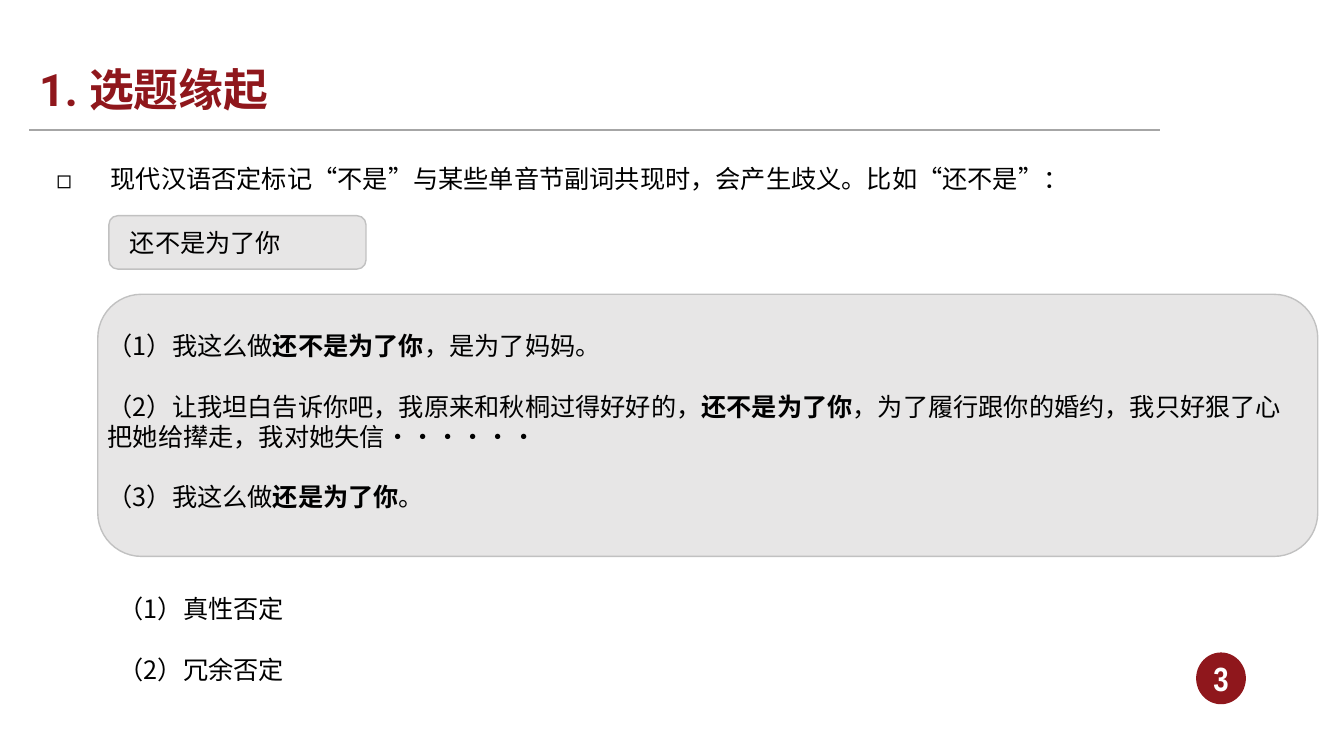
from dataclasses import dataclass

from lxml.etree import SubElement
from pptx import Presentation
from pptx.dml.color import RGBColor
from pptx.enum.shapes import MSO_CONNECTOR, MSO_SHAPE
from pptx.enum.text import MSO_ANCHOR, PP_ALIGN
from pptx.oxml.ns import qn
from pptx.util import Inches, Pt


@dataclass(frozen=True)
class Theme:
    red: RGBColor = RGBColor(0x8F, 0x17, 0x1C)
    panel: RGBColor = RGBColor(0xE7, 0xE6, 0xE6)
    border: RGBColor = RGBColor(0xC1, 0xC1, 0xC1)
    rule: RGBColor = RGBColor(0xA6, 0xA6, 0xA6)
    black: RGBColor = RGBColor(0, 0, 0)
    white: RGBColor = RGBColor(0xFF, 0xFF, 0xFF)
    cjk: str = "Noto Sans CJK SC"
    title_font: str = "Roboto"
    lead_font: str = "Calibri"
    narrow_font: str = "Arial Narrow"
    title: int = 32
    number: int = 24
    body: int = 18
    gap: float = 21.5


@dataclass(frozen=True)
class Box:
    left: float
    top: float
    width: float
    height: float

    def emu(self):
        return [Inches(v) for v in (self.left, self.top, self.width, self.height)]


@dataclass(frozen=True)
class Run:
    text: str
    bold: bool = False


@dataclass(frozen=True)
class Style:
    font: str
    size: int
    color: RGBColor


T = Theme()
BODY = Style(T.cjk, T.body, T.black)
LEAD = Style(T.lead_font, T.body, T.black)
PHRASE = Style(T.narrow_font, T.body, T.black)
TITLE = Style(T.title_font, T.title, T.red)
NUMBER = Style(T.narrow_font, T.number, T.white)

PANELS = [Box(1.08, 2.14, 2.55, 0.53), Box(0.97, 2.92, 12.1, 2.6)]
EXAMPLES = [
    [Run("（1）我这么做"), Run("还不是为了你", True), Run("，是为了妈妈。")],
    [
        Run("（2）让我坦白告诉你吧，我原来和秋桐过得好好的，"),
        Run("还不是为了你", True),
        Run("，为了履行跟你的婚约，我只好狠了心把她给撵走，我对她失信······"),
    ],
    [Run("（3）我这么做"), Run("还是为了你", True), Run("。")],
]
READINGS = [[Run("（1）真性否定")], [Run("（2）冗余否定")]]


def write(tf, paragraphs: list[list[Run]], style: Style) -> None:
    tf.word_wrap = True
    for i, runs in enumerate(paragraphs):
        p = tf.paragraphs[0] if i == 0 else tf.add_paragraph()
        if i < len(paragraphs) - 1:
            p.space_after = Pt(T.gap)
        for run in runs:
            r = p.add_run()
            r.text = run.text
            r.font.name = style.font
            r.font.size = Pt(style.size)
            r.font.bold = run.bold
            r.font.color.rgb = style.color
            ea = SubElement(r.font._element, qn("a:ea"))
            ea.set("typeface", T.cjk)


def add_text(s, box: Box, paragraphs: list[list[Run]], style: Style):
    tf = s.shapes.add_textbox(*box.emu()).text_frame
    write(tf, paragraphs, style)
    return tf


def add_shape(s, kind: MSO_SHAPE, box: Box, fill: RGBColor, line: RGBColor):
    sp = s.shapes.add_shape(kind, *box.emu())
    sp.shadow.inherit = False
    sp.fill.solid()
    sp.fill.fore_color.rgb = fill
    sp.line.color.rgb = line
    sp.line.width = Pt(1)
    return sp


def add_rule(s, left: float, right: float, y: float) -> None:
    line = s.shapes.add_connector(
        MSO_CONNECTOR.STRAIGHT, Inches(left), Inches(y), Inches(right), Inches(y)
    )
    line.line.color.rgb = T.rule
    line.line.width = Pt(1.5)
    SubElement(line._element.spPr, qn("a:effectLst"))


def add_bullet(p, char: str, indent: float) -> None:
    pPr = p._p.get_or_add_pPr()
    pPr.set("marL", str(Inches(indent)))
    pPr.set("indent", str(-Inches(indent)))
    SubElement(pPr, qn("a:buFont")).set("typeface", T.cjk)
    SubElement(pPr, qn("a:buChar")).set("char", char)


def add_number(s, box: Box, number: str) -> None:
    tf = add_shape(s, MSO_SHAPE.OVAL, box, T.red, T.red).text_frame
    tf.margin_left = tf.margin_right = tf.margin_top = tf.margin_bottom = 0
    tf.vertical_anchor = MSO_ANCHOR.MIDDLE
    write(tf, [[Run(number, True)]], NUMBER)
    tf.paragraphs[0].alignment = PP_ALIGN.CENTER


def main() -> None:
    prs = Presentation()
    prs.slide_width, prs.slide_height = Inches(13.33), Inches(7.5)
    s = prs.slides.add_slide(prs.slide_layouts[6])

    title = add_text(s, Box(0.29, 0.37, 8.52, 1.09), [[Run("1. 选题缘起", True)]], TITLE)
    title.vertical_anchor = MSO_ANCHOR.MIDDLE
    title.paragraphs[0].line_spacing = 0.9
    add_rule(s, 0.29, 11.51, 1.29)

    lead = "现代汉语否定标记“不是”与某些单音节副词共现时，会产生歧义。比如“还不是”："
    tf = add_text(s, Box(0.46, 1.57, 11.71, 0.4), [[Run(lead)]], LEAD)
    add_bullet(tf.paragraphs[0], "◻", 0.54)

    for panel in PANELS:
        add_shape(s, MSO_SHAPE.ROUNDED_RECTANGLE, panel, T.panel, T.border)
    add_text(s, Box(1.19, 2.21, 1.9, 0.4), [[Run("还不是为了你")]], PHRASE)
    add_text(s, Box(0.97, 3.23, 11.91, 2.52), EXAMPLES, BODY)
    add_text(s, Box(1.08, 5.84, 11.96, 1.01), READINGS, BODY)
    add_number(s, Box(11.87, 6.48, 0.48, 0.5), "3")

    prs.save("out.pptx")


if __name__ == "__main__":
    main()
